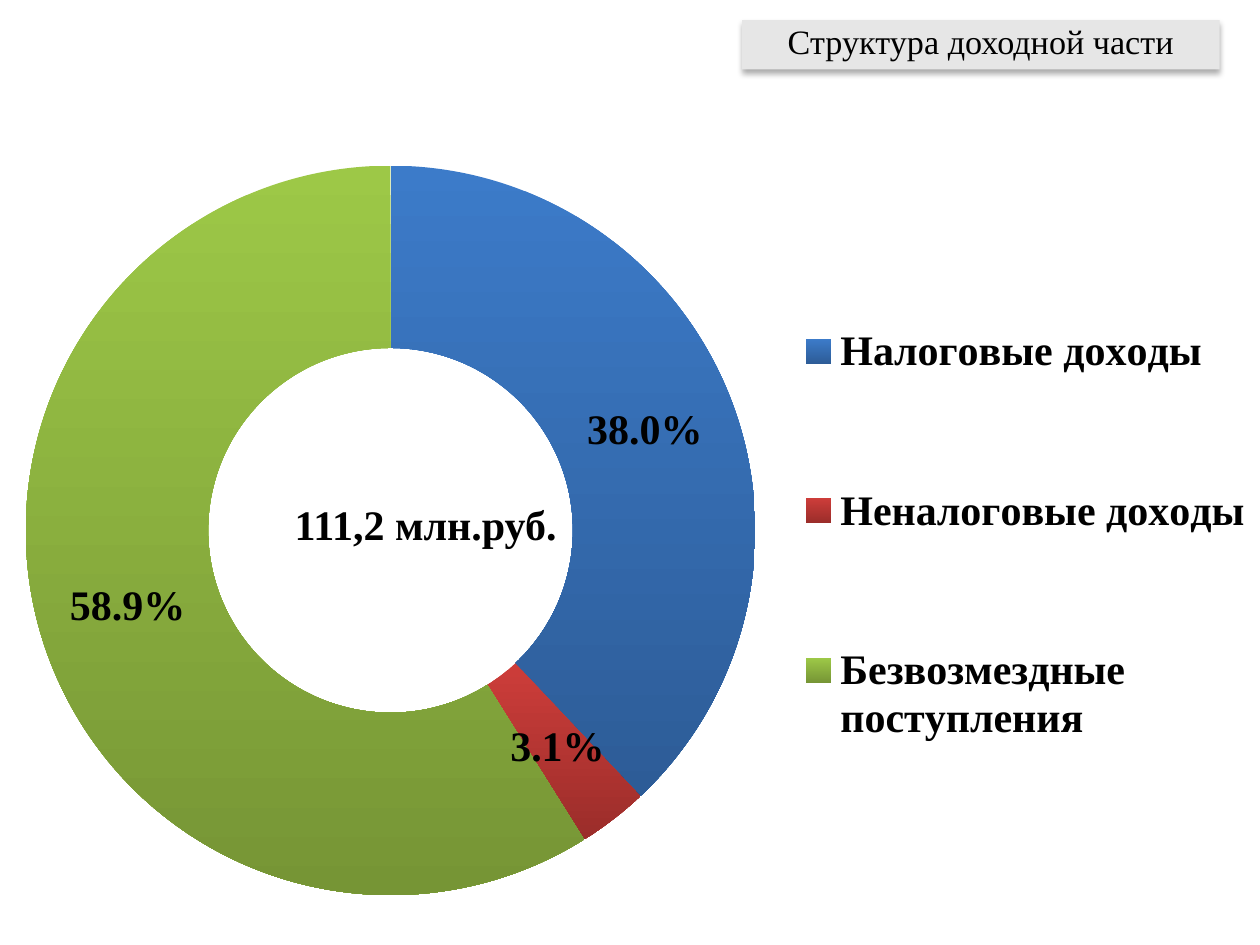
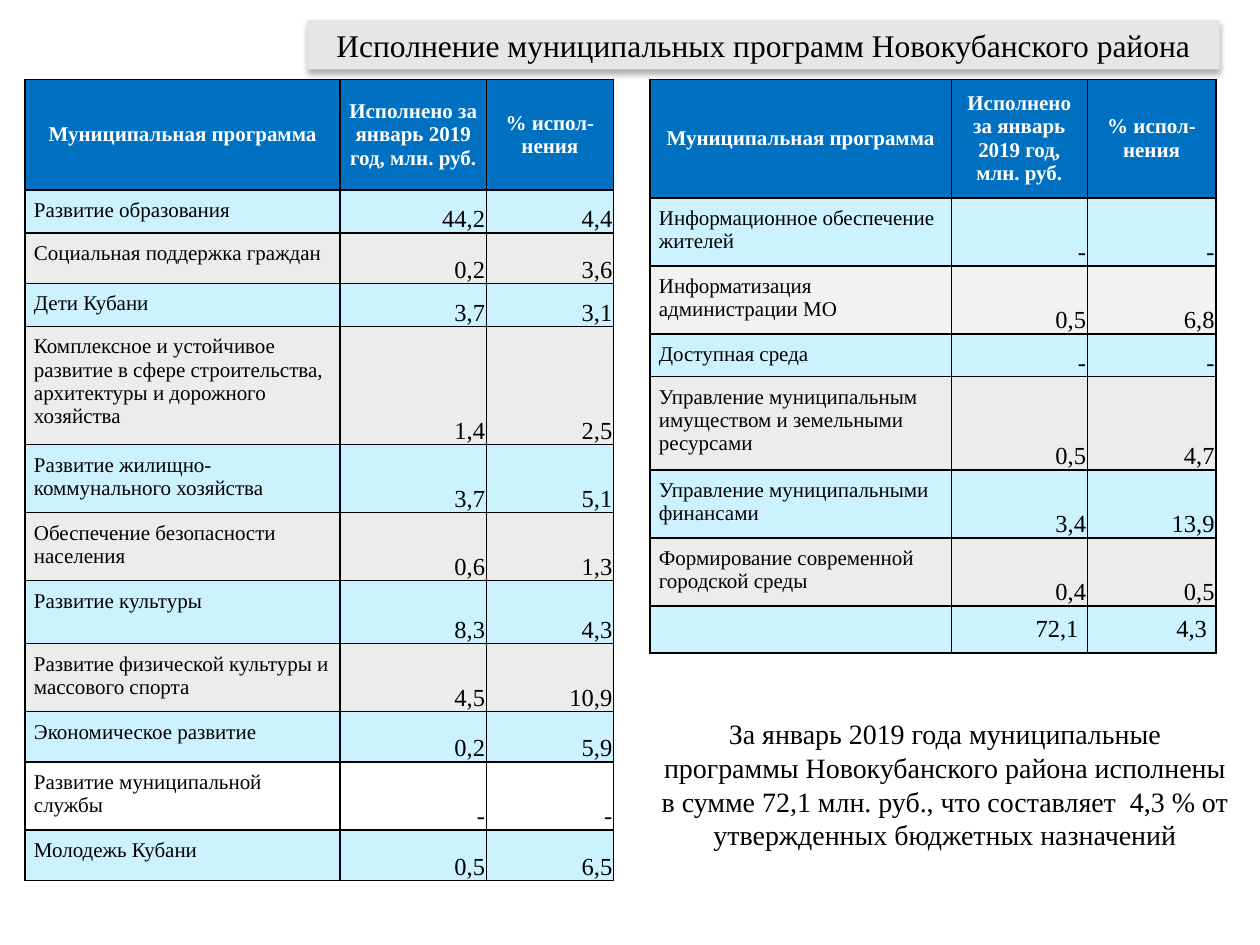
from lxml.etree import SubElement
from pptx import Presentation
from pptx.chart.data import CategoryChartData
from pptx.dml.color import RGBColor
from pptx.enum.chart import XL_CHART_TYPE as ChartType, XL_LEGEND_POSITION as LegendPosition
from pptx.enum.shapes import MSO_SHAPE as Preset
from pptx.enum.text import MSO_ANCHOR as Anchor, PP_ALIGN as Align
from pptx.oxml import parse_xml
from pptx.oxml.ns import nsdecls, qn
from pptx.util import Inches, Pt

FONT = "Times New Roman"
BLACK, WHITE = "000000", "FFFFFF"
BAND, HEADER, BLUE_ROW, GREY_ROW, PALE_ROW = "E6E6E6", "0070C0", "CDF2FF", "ECECEC", "F2F2F2"
BAND_RIGHT = 9.68
HEADINGS = ("Муниципальная программа", "Исполнено за январь 2019 год, млн. руб.", "% испол-нения")

INCOME = [
    ("Налоговые доходы", 38, "3C7BC9", "2D5C97"),
    ("Неналоговые доходы", 3.1, "CD3D3A", "9B2D2A"),
    ("Безвозмездные поступления", 58.9, "9DC847", "769535"),
]

LEFT_PROGRAMMES = [
    ("Развитие образования", "44,2", "4,4", 0.32),
    ("Социальная поддержка граждан", "0,2", "3,6", 0.4),
    ("Дети Кубани", "3,7", "3,1", 0.32),
    ("Комплексное и устойчивое развитие в сфере строительства, архитектуры и дорожного хозяйства",
     "1,4", "2,5", 0.87),
    ("Развитие жилищно-коммунального хозяйства", "3,7", "5,1", 0.51),
    ("Обеспечение безопасности населения", "0,6", "1,3", 0.51),
    ("Развитие культуры", "8,3", "4,3", 0.5),
    ("Развитие физической культуры и массового спорта", "4,5", "10,9", 0.51),
    ("Экономическое развитие", "0,2", "5,9", 0.4),
    ("Развитие муниципальной службы", "-", "-", 0.5),
    ("Молодежь Кубани", "0,5", "6,5", 0.4),
]
RIGHT_PROGRAMMES = [
    ("Информационное обеспечение жителей", "-", "-", 0.5),
    ("Информатизация администрации МО", "0,5", "6,8", 0.5),
    ("Доступная среда", "-", "-", 0.32),
    ("Управление муниципальным имуществом и земельными ресурсами", "0,5", "4,7", 0.69),
    ("Управление муниципальными финансами", "3,4", "13,9", 0.5),
    ("Формирование современной городской среды", "0,4", "0,5", 0.5),
    ("", "72,1", "4,3", 0.35),
]


def rgb(value):
    return RGBColor.from_string(value)


def style_font(font, size, color=BLACK, bold=False):
    font.name = FONT
    font.size = Pt(size)
    font.bold = bold
    font.color.rgb = rgb(color)


def write(frame, text, size, color=BLACK, bold=False, align=Align.LEFT):
    frame.word_wrap = True
    paragraph = frame.paragraphs[0]
    paragraph.alignment = align
    run = paragraph.add_run()
    run.text = text
    style_font(run.font, size, color, bold)
    return paragraph


def add_title_band(slide, text, width, size, line_spacing=1.0):
    band = slide.shapes.add_shape(
        Preset.RECTANGLE, Inches(BAND_RIGHT - width), Inches(0.16), Inches(width), Inches(0.39))
    band.fill.solid()
    band.fill.fore_color.rgb = rgb(BAND)
    band.line.fill.background()
    band.shadow.inherit = False
    effects = band.element.spPr.find(qn("a:effectLst"))
    effects.append(parse_xml(
        f'<a:outerShdw {nsdecls("a")} blurRad="{Pt(3.5)}" dist="{Pt(2.2)}" dir="5400000" '
        f'rotWithShape="0"><a:srgbClr val="{BLACK}"><a:alpha val="32000"/></a:srgbClr></a:outerShdw>'))
    band.text_frame.vertical_anchor = Anchor.MIDDLE
    write(band.text_frame, text, size, align=Align.CENTER).line_spacing = line_spacing


def add_text(slide, box, text, size, bold=False, align=Align.LEFT):
    shape = slide.shapes.add_textbox(*map(Inches, box))
    write(shape.text_frame, text, size, bold=bold, align=align)


def place_manually(element, before, x, y, width, height, target=""):
    for old in element.findall(qn("c:layout")):
        element.remove(old)
    layout = parse_xml(
        f'<c:layout {nsdecls("c")}><c:manualLayout>{target}<c:xMode val="edge"/><c:yMode val="edge"/>'
        f'<c:x val="{x}"/><c:y val="{y}"/><c:w val="{width}"/><c:h val="{height}"/>'
        '</c:manualLayout></c:layout>')
    element.find(qn(before)).addprevious(layout)


def add_income_chart(slide, box):
    data = CategoryChartData()
    data.categories = [name for name, *_ in INCOME]
    data.add_series("Доходы", [value for _, value, *_ in INCOME])
    chart = slide.shapes.add_chart(ChartType.DOUGHNUT, *map(Inches, box), data).chart
    style_font(chart.font, 24, bold=True)
    chart.has_title = False
    chart.has_legend = True
    chart.legend.position = LegendPosition.RIGHT
    chart.legend.include_in_layout = False
    plot = chart.plots[0]
    plot.vary_by_categories = True
    plot.has_data_labels = True
    labels = plot.data_labels
    labels.show_percentage = True
    labels.show_value = False
    labels.number_format = "0.0%"
    labels.number_format_is_linked = False
    style_font(labels.font, 24, bold=True)
    for index, (_, _, light, dark) in enumerate(INCOME):
        fill = plot.series[0].points[index].format.fill
        fill.gradient()
        fill.gradient_angle = 270
        for stop, color in zip(fill.gradient_stops, (light, dark)):
            stop.color.rgb = rgb(color)
    chart_element = chart.element
    place_manually(chart_element.find(".//" + qn("c:plotArea")), "c:doughnutChart",
                   0.02, 0.06, 0.58, 0.88, '<c:layoutTarget val="inner"/>')
    place_manually(chart_element.find(".//" + qn("c:legend")), "c:overlay", 0.63, 0.12, 0.37, 0.77)
    chart_element.find(".//" + qn("c:holeSize")).set("val", "50")


def format_cell(cell, fill, anchor, insets):
    properties = cell._tc.get_or_add_tcPr()
    for side in ("lnL", "lnR", "lnT", "lnB"):
        line = SubElement(properties, qn("a:" + side), w=str(Pt(1)))
        SubElement(SubElement(line, qn("a:solidFill")), qn("a:srgbClr"), val=BLACK)
    cell.fill.solid()
    cell.fill.fore_color.rgb = rgb(fill)
    cell.vertical_anchor = anchor
    cell.margin_left, cell.margin_right, cell.margin_top, cell.margin_bottom = map(Inches, insets)


def add_programme_table(slide, left, top, widths, programmes, special_fills):
    heights = [0.88] + [row[-1] for row in programmes]
    table = slide.shapes.add_table(
        len(heights), len(widths), Inches(left), Inches(top),
        Inches(sum(widths)), Inches(sum(heights))).table
    for column, width in zip(table.columns, widths):
        column.width = Inches(width)
    for row, height in zip(table.rows, heights):
        row.height = Inches(height)
    wide, tight = (0.07,) * 4, (0.01, 0.01, 0.01, 0)
    for index, heading in enumerate(HEADINGS):
        cell = table.cell(0, index)
        format_cell(cell, HEADER, Anchor.MIDDLE, wide)
        write(cell.text_frame, heading, 12, WHITE, True, Align.CENTER)
    for number, (name, *values, _) in enumerate(programmes, 1):
        fill = special_fills.get(number, BLUE_ROW if number % 2 else GREY_ROW)
        name_cell = table.cell(number, 0)
        format_cell(name_cell, fill, Anchor.TOP, wide if name else tight)
        if name:
            write(name_cell.text_frame, name, 12)
        for index, value in enumerate(values, 1):
            cell = table.cell(number, index)
            if name:
                format_cell(cell, fill, Anchor.BOTTOM, tight)
            else:
                format_cell(cell, fill, Anchor.MIDDLE, wide)
            write(cell.text_frame, value, 14, align=Align.RIGHT)


def build_income_slide(slide):
    add_title_band(slide, "Структура доходной части", 3.79, 19.5, 0.8)
    add_text(slide, (2.24, 3.91, 2.99, 0.5), "111,2 млн.руб.", 24, bold=True)
    add_income_chart(slide, (0, 0.92, 10, 6.58))


def build_programmes_slide(slide):
    add_title_band(slide, "Исполнение муниципальных программ Новокубанского района", 7.24, 18)
    add_programme_table(slide, 5.16, 0.63, (2.39, 1.08, 1.02), RIGHT_PROGRAMMES, {2: PALE_ROW})
    add_programme_table(slide, 0.2, 0.63, (2.5, 1.16, 1.01), LEFT_PROGRAMMES, {10: WHITE})
    add_text(slide, (5.13, 5.64, 4.74, 1.18),
             "За январь 2019 года муниципальные программы Новокубанского района исполнены "
             "в сумме 72,1 млн. руб., что составляет  4,3 % от утвержденных бюджетных назначений",
             16, align=Align.CENTER)


def main():
    presentation = Presentation()
    presentation.slide_width, presentation.slide_height = Inches(10), Inches(7.5)
    for build in (build_income_slide, build_programmes_slide):
        build(presentation.slides.add_slide(presentation.slide_layouts[6]))
    presentation.save("out.pptx")


if __name__ == "__main__":
    main()
